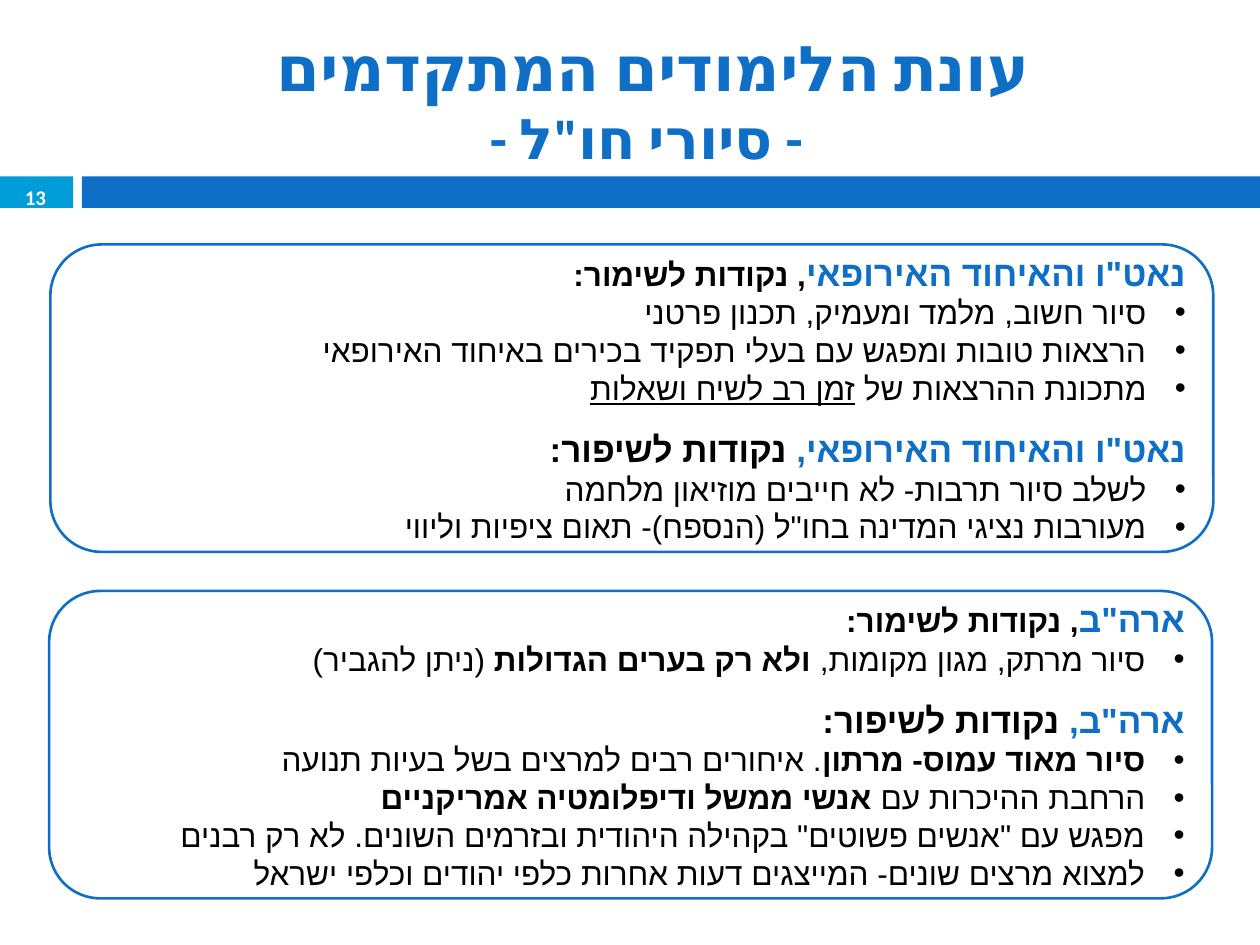
from dataclasses import dataclass

from lxml import etree
from pptx import Presentation
from pptx.dml.color import RGBColor
from pptx.enum import lang, shapes, text
from pptx.oxml import ns
from pptx.util import Inches, Pt


@dataclass(frozen=True)
class Theme:
    blue: RGBColor = RGBColor(0x0F, 0x6F, 0xC6)
    cyan: RGBColor = RGBColor(0x00, 0x9D, 0xD9)
    black: RGBColor = RGBColor(0, 0, 0)
    white: RGBColor = RGBColor(255, 255, 255)
    title_font: str = "Calibri"
    body_font: str = "Arial"
    title_size: float = 36
    subtitle_size: float = 32
    number_size: float = 11.9
    heading_size: float = 20
    body_size: float = 18
    outline: float = 1.5


THEME = Theme()
PLAIN, BOLD, UNDERLINED = "plain", "bold", "underlined"

NATO = 'נאט"ו והאיחוד האירופאי'
USA = 'ארה"ב'
KEEP_POINTS = ", נקודות לשימור:"
IMPROVE_POINTS = "נקודות לשיפור:"

# Each panel: topic, points to keep, points to improve; a point is a list of runs.
NATO_PANEL = (
    NATO,
    [
        [("סיור חשוב, מלמד ומעמיק, תכנון פרטני ", PLAIN)],
        [("הרצאות טובות ומפגש עם בעלי תפקיד בכירים באיחוד האירופאי", PLAIN)],
        [("מתכונת ההרצאות של ", PLAIN), ("זמן רב לשיח ושאלות", UNDERLINED)],
    ],
    [
        [("לשלב סיור תרבות- לא חייבים מוזיאון מלחמה", PLAIN)],
        [('מעורבות נציגי המדינה בחו"ל (הנספח)- תאום ציפיות וליווי', PLAIN)],
    ],
)
USA_PANEL = (
    USA,
    [
        [("סיור מרתק, מגון מקומות, ", PLAIN), ("ולא רק בערים הגדולות ", BOLD),
         ("(ניתן להגביר)", PLAIN)],
    ],
    [
        [("סיור מאוד עמוס- מרתון", BOLD),
         (". איחורים רבים למרצים בשל בעיות תנועה", PLAIN)],
        [("הרחבת ההיכרות עם ", PLAIN), ("אנשי ממשל ודיפלומטיה אמריקניים", BOLD)],
        [('מפגש עם "אנשים פשוטים" בקהילה היהודית ובזרמים השונים. לא רק רבנים', PLAIN)],
        [("למצוא מרצים שונים- המייצגים דעות אחרות כלפי יהודים וכלפי ישראל", PLAIN)],
    ],
)


def add_run(paragraph, words, size, color, font_name, bold=True, underline=False):
    run = paragraph.add_run()
    run.text = words
    font = run.font
    font.size, font.bold, font.name = Pt(size), bold, font_name
    font.color.rgb = color
    font.language_id = lang.MSO_LANGUAGE_ID.HEBREW
    if underline:
        font.underline = True
    etree.SubElement(run._r.get_or_add_rPr(), ns.qn("a:cs"), typeface=font_name)


def set_right_to_left(paragraph, alignment):
    paragraph.alignment = alignment
    paragraph._p.get_or_add_pPr().set("rtl", "1")


def add_bar(slide, box, color):
    bar = slide.shapes.add_shape(shapes.MSO_SHAPE.RECTANGLE, *box)
    bar.shadow.inherit = False
    bar.fill.solid()
    bar.fill.fore_color.rgb = color
    bar.line.fill.background()


def add_header_band(slide, left, top, width, height):
    """Draw the short number tab and the long bar, split by a narrow gap."""
    tab_width, bar_offset = Inches(0.58), Inches(0.65)
    add_bar(slide, (left, top, tab_width, height), THEME.cyan)
    add_bar(slide, (left + bar_offset, top, width - bar_offset, height), THEME.blue)
    number = slide.shapes.add_textbox(left - Inches(0.01), top + Inches(0.03),
                                      tab_width, Inches(0.27))
    frame = number.text_frame
    frame.word_wrap = True
    frame.vertical_anchor = text.MSO_ANCHOR.MIDDLE
    paragraph = frame.paragraphs[0]
    set_right_to_left(paragraph, text.PP_ALIGN.CENTER)
    add_run(paragraph, "13", THEME.number_size, THEME.white, THEME.title_font)


def fill_title(slide, left, top, width, height):
    title = slide.shapes.title
    title.left, title.top, title.width, title.height = left, top, width, height
    frame = title.text_frame
    frame.auto_size = text.MSO_AUTO_SIZE.NONE
    frame.vertical_anchor = text.MSO_ANCHOR.MIDDLE
    paragraph = frame.paragraphs[0]
    set_right_to_left(paragraph, text.PP_ALIGN.CENTER)
    add_run(paragraph, "עונת הלימודים המתקדמים ", THEME.title_size,
            THEME.blue, THEME.title_font)
    paragraph.add_line_break()
    add_run(paragraph, '- סיורי חו"ל -', THEME.subtitle_size,
            THEME.blue, THEME.title_font)


def write_heading(paragraph, topic, label, label_size):
    set_right_to_left(paragraph, text.PP_ALIGN.JUSTIFY)
    add_run(paragraph, topic, THEME.heading_size, THEME.blue, THEME.body_font)
    add_run(paragraph, label, label_size, THEME.black, THEME.body_font)


def add_points(frame, points):
    for runs in points:
        paragraph = frame.add_paragraph()
        set_right_to_left(paragraph, text.PP_ALIGN.JUSTIFY)
        properties = paragraph._p.get_or_add_pPr()
        indent = Inches(0.31)
        properties.set("marL", str(indent))
        properties.set("indent", str(-indent))
        etree.SubElement(properties, ns.qn("a:buFont"), typeface=THEME.body_font)
        etree.SubElement(properties, ns.qn("a:buChar"), char="•")
        for words, style in runs:
            add_run(paragraph, words, THEME.body_size, THEME.black, THEME.body_font,
                    bold=style == BOLD, underline=style == UNDERLINED)


def add_panel(slide, left, top, width, height, content):
    topic, keep, improve = content
    panel = slide.shapes.add_shape(shapes.MSO_SHAPE.ROUNDED_RECTANGLE,
                                   left, top, width, height)
    panel.shadow.inherit = False
    panel.fill.solid()
    panel.fill.fore_color.rgb = THEME.white
    panel.line.color.rgb = THEME.blue
    panel.line.width = Pt(THEME.outline)
    frame = panel.text_frame
    frame.word_wrap = True
    frame.vertical_anchor = text.MSO_ANCHOR.MIDDLE
    write_heading(frame.paragraphs[0], topic, KEEP_POINTS, THEME.body_size)
    add_points(frame, keep)
    second_heading = frame.add_paragraph()
    second_heading.line_spacing = 1.5
    write_heading(second_heading, topic + ", ", IMPROVE_POINTS, THEME.heading_size)
    add_points(frame, improve)


def main():
    presentation = Presentation()
    presentation.slide_width, presentation.slide_height = Inches(10), Inches(7.5)
    slide = presentation.slides.add_slide(presentation.slide_layouts[5])
    add_header_band(slide, 0, Inches(1.4), presentation.slide_width, Inches(0.25))
    fill_title(slide, Inches(0.67), Inches(0.25), Inches(8.92), Inches(1.08))
    panel_size = Inches(9.23), Inches(2.44)
    add_panel(slide, Inches(0.4), Inches(1.94), *panel_size, NATO_PANEL)
    add_panel(slide, Inches(0.39), Inches(4.69), *panel_size, USA_PANEL)
    presentation.save("out.pptx")


if __name__ == "__main__":
    main()
